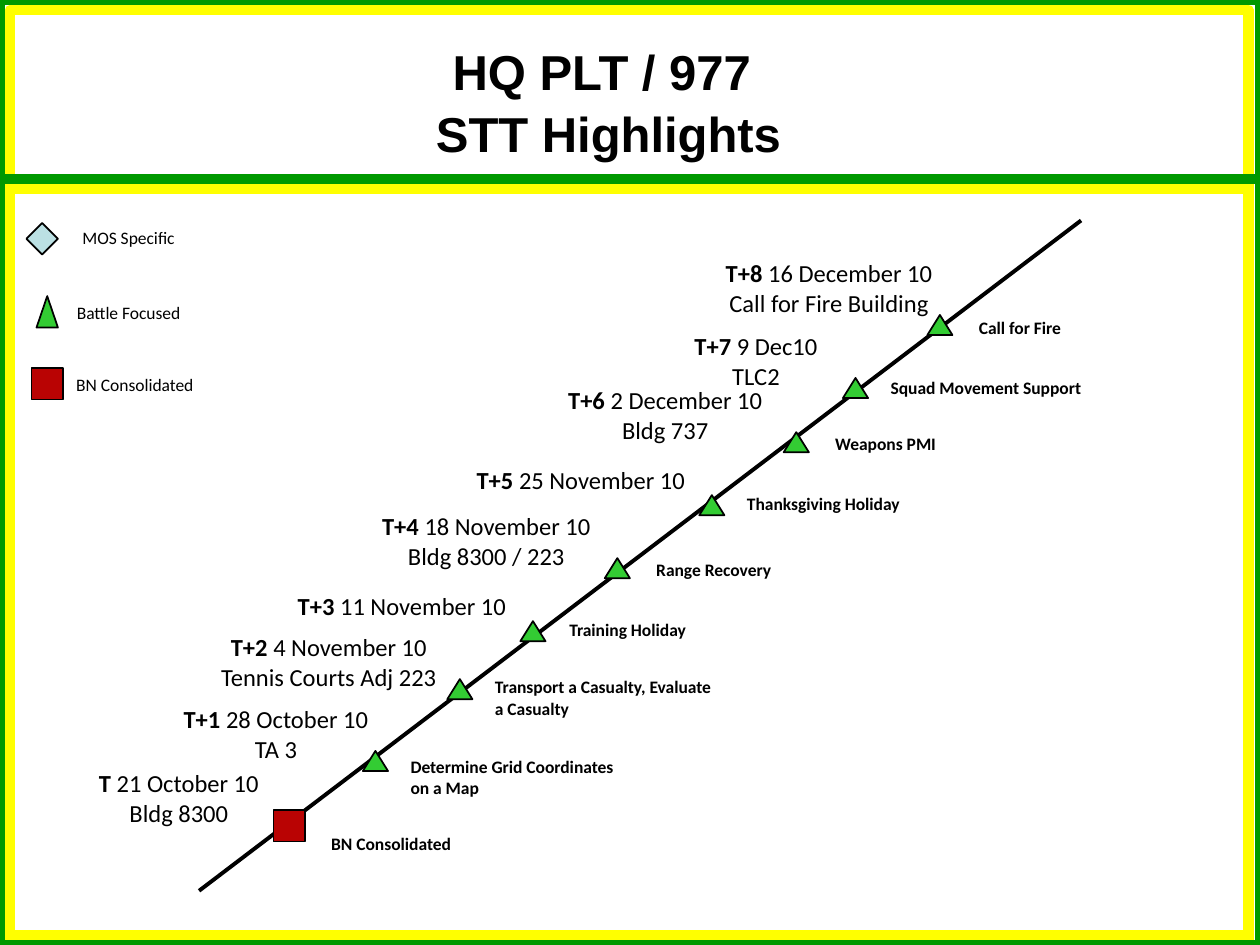
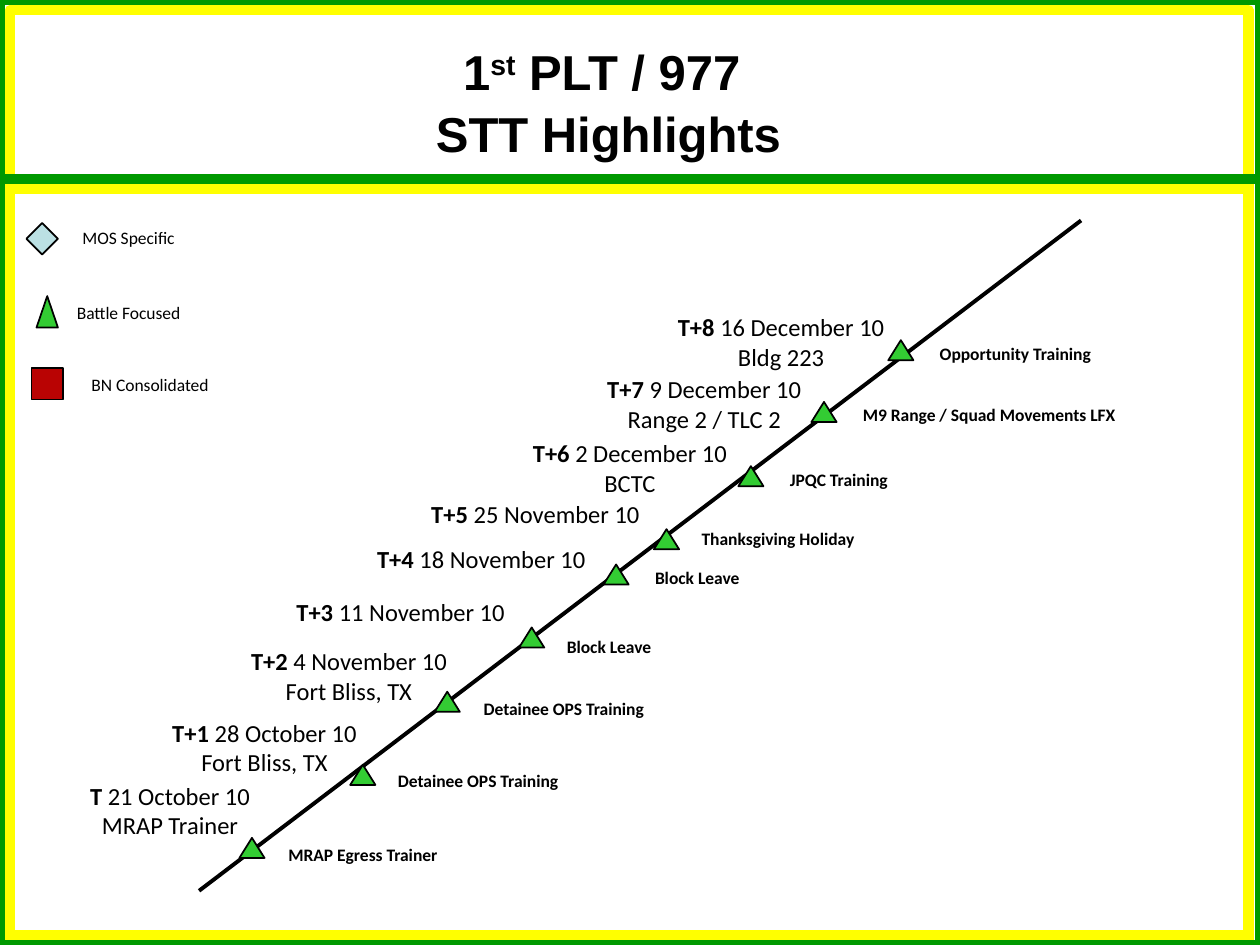
"""Build two platoon training timelines that share a frame, legend and title style."""
from dataclasses import dataclass

import pptx
import pptx.dml.color
import pptx.enum.shapes
import pptx.enum.text
import pptx.util
from lxml import etree

SHAPE = pptx.enum.shapes.MSO_SHAPE
ALIGN = pptx.enum.text.PP_ALIGN
COLUMNS, ROWS = 100, 75
BLACK, GREEN, YELLOW = "000000", "009900", "FFFF00"
LIGHT_BLUE, RED, LIGHT_GREEN = "BBE0E3", "B90303", "33CC33"
FRAME_POINTS, MARKER_POINTS, TIMELINE_POINTS = 6, 1, 2.25
LINE_ROWS = {1: 3.4, 2: 5.7}

presentation = pptx.Presentation()
presentation.slide_width = pptx.util.Inches(10)
presentation.slide_height = pptx.util.Inches(7.5)


@dataclass(frozen=True)
class Area:
    left: float
    top: float
    width: float
    height: float

    def lengths(self) -> tuple[int, int, int, int]:
        return across(self.left), down(self.top), across(self.width), down(self.height)


@dataclass(frozen=True)
class Marker:
    preset: SHAPE
    fill: str
    width: float
    height: float


@dataclass(frozen=True)
class LegendEntry:
    label: str
    marker: Marker
    marker_left: float
    marker_top: float
    label_left: float
    label_top: float
    label_width: float


@dataclass(frozen=True)
class Week:
    tag: str
    date: str
    place: str
    date_left: float
    date_top: float
    marker_left: float
    marker_top: float
    task: str
    task_left: float
    task_top: float
    task_lines: int = 1
    task_width: float = 19.2
    marker: Marker = Marker(SHAPE.ISOSCELES_TRIANGLE, LIGHT_GREEN, 2, 1.6)


@dataclass(frozen=True)
class Run:
    text: str
    bold: bool | None = None
    raised: bool = False


@dataclass(frozen=True)
class Platoon:
    name: list[Run]
    last_legend_left: float
    weeks: list[Week]


SQUARE = Marker(SHAPE.RECTANGLE, RED, 2.5, 2.5)
DIAMOND = Marker(SHAPE.DIAMOND, LIGHT_BLUE, 2.5, 2.5)
TALL_TRIANGLE = Marker(SHAPE.ISOSCELES_TRIANGLE, LIGHT_GREEN, 1.7, 2.5)

PLATOONS = [
    Platoon([Run("HQ PLT / 977 ")], 4.6, [
        Week("T", "21 October 10", "Bldg 8300", 2.5, 60.5, 21.7, 64.3,
             "BN Consolidated", 25.3, 65.6, marker=SQUARE),
        Week("T+1", "28 October 10", "TA 3", 10.2, 55.4, 28.8, 59.6,
             "Determine Grid Coordinates on a Map", 31.6, 59.5, 2),
        Week("T+2", "4 November 10", "Tennis Courts Adj 223", 14.4, 49.7, 35.5, 53.9,
             "Transport a Casualty, Evaluate a Casualty", 38.3, 53.2, 2),
        Week("T+3", "11 November 10", "", 20.2, 46.4, 41.3, 49.3,
             "Training Holiday", 44.2, 48.6),
        Week("T+4", "18 November 10", "Bldg 8300 / 223", 26.9, 40.1, 48, 44.3,
             "Range Recovery", 51.1, 43.9),
        Week("T+5", "25 November 10", "", 34.4, 36.4, 55.5, 39.3,
             "Thanksgiving Holiday", 58.3, 38.6),
        Week("T+6", "2 December 10", "Bldg 737", 41.1, 30.1, 62.2, 34.3,
             "Weapons PMI", 65.3, 33.9),
        Week("T+7", "9 Dec10", "TLC2", 48.3, 25.8, 66.9, 30,
             "Squad Movement Support", 69.7, 29.4),
        Week("T+8", "16 December 10", "Call for Fire Building", 54.1, 20, 73.6, 25,
             "Call for Fire", 76.7, 24.7),
    ]),
    Platoon([Run("1"), Run("st", raised=True), Run(" PLT / 977 ")], 5.8, [
        Week("T", "21 October 10", "MRAP Trainer", 1.8, 61.5, 19, 66.5,
             "MRAP Egress Trainer", 21.9, 66.5),
        Week("T+1", "28 October 10", "Fort Bliss, TX", 9.3, 56.5, 27.8, 60.7,
             "Detainee OPS Training", 30.6, 60.6),
        Week("T+2", "4 November 10", "Fort Bliss, TX", 16, 50.8, 34.5, 54.9,
             "Detainee OPS Training", 37.4, 54.9),
        Week("T+3", "11 November 10", "", 20.1, 46.9, 41.2, 49.8,
             "Block Leave", 44, 50),
        Week("T+4", "18 November 10", "", 26.5, 42.7, 47.9, 44.8,
             "Block Leave", 51, 44.5),
        Week("T+5", "25 November 10", "", 30.8, 39.1, 51.9, 42,
             "Thanksgiving Holiday", 54.7, 41.4),
        Week("T+6", "2 December 10", "BCTC", 38.3, 34.3, 58.6, 37,
             "JPQC Training", 61.7, 36.7),
        Week("T+7", "9 December 10", "Range 2 / TLC 2", 44.2, 29.2, 64.4, 31.9,
             "M9 Range / Squad Movements LFX", 67.5, 31.6, task_width=22.5),
        Week("T+8", "16 December 10", "Bldg 223", 50.3, 24.3, 70.5, 27,
             "Opportunity Training", 73.6, 26.7),
    ]),
]


def across(columns: float) -> int:
    return round(presentation.slide_width * columns / COLUMNS)


def down(rows: float) -> int:
    return round(presentation.slide_height * rows / ROWS)


def color(value: str) -> pptx.dml.color.RGBColor:
    return pptx.dml.color.RGBColor.from_string(value)


def add_outlined_shape(slide, preset: SHAPE, area: Area, line: str, points: float,
                       fill: str | None = None) -> None:
    shape = slide.shapes.add_shape(preset, *area.lengths())
    shape.shadow.inherit = False
    shape.line.color.rgb = color(line)
    shape.line.width = pptx.util.Pt(points)
    if fill:
        shape.fill.solid()
        shape.fill.fore_color.rgb = color(fill)
    else:
        shape.fill.background()


def add_marker(slide, marker: Marker, left: float, top: float) -> None:
    area = Area(left, top, marker.width, marker.height)
    add_outlined_shape(slide, marker.preset, area, BLACK, MARKER_POINTS, marker.fill)


def add_line(slide, start: tuple[float, float], end: tuple[float, float],
             line: str, points: float) -> None:
    connector = slide.shapes.add_connector(
        pptx.enum.shapes.MSO_CONNECTOR.STRAIGHT,
        across(start[0]), down(start[1]), across(end[0]), down(end[1]))
    connector.line.color.rgb = color(line)
    connector.line.width = pptx.util.Pt(points)
    etree.SubElement(connector._element.spPr, pptx.oxml.ns.qn("a:effectLst"))


def write_paragraphs(text_frame, lines: list[list[Run]], font_name: str, size: float,
                     alignment: ALIGN, bold: bool | None = None,
                     line_spacing: float | None = None) -> None:
    text_frame.word_wrap = True
    for index, runs in enumerate(lines):
        paragraph = text_frame.add_paragraph() if index else text_frame.paragraphs[0]
        paragraph.alignment = alignment
        paragraph.line_spacing = line_spacing
        paragraph.font.name = font_name
        paragraph.font.size = pptx.util.Pt(size)
        paragraph.font.bold = bold
        paragraph.font.color.rgb = color(BLACK)
        for item in runs:
            run = paragraph.add_run()
            run.text = item.text
            if item.bold is not None:
                run.font.bold = item.bold
            if item.raised:
                run._r.get_or_add_rPr().set("baseline", "30000")


def add_label(slide, area: Area, lines: list[list[Run]], size: float,
              alignment: ALIGN = ALIGN.CENTER, bold: bool | None = None) -> None:
    text_frame = slide.shapes.add_textbox(*area.lengths()).text_frame
    write_paragraphs(text_frame, lines, "Calibri", size, alignment, bold)


def add_frame(slide) -> None:
    add_outlined_shape(slide, SHAPE.RECTANGLE, Area(0.8, 0.8, 98.3, 74.2),
                       YELLOW, FRAME_POINTS)
    add_outlined_shape(slide, SHAPE.RECTANGLE, Area(0, 0, COLUMNS, ROWS),
                       GREEN, FRAME_POINTS)
    for row, margin, line in ((74.2, 0.8, YELLOW), (15, 0.8, YELLOW), (14.2, 0, GREEN)):
        add_line(slide, (margin, row), (COLUMNS - margin, row), line, FRAME_POINTS)


def add_title(slide, name: list[Run]) -> None:
    title = slide.shapes.title
    title.left, title.top, title.width, title.height = Area(3.3, 0.2, 90, 15.5).lengths()
    title.text_frame.auto_size = pptx.enum.text.MSO_AUTO_SIZE.NONE
    title.text_frame.vertical_anchor = pptx.enum.text.MSO_ANCHOR.MIDDLE
    write_paragraphs(title.text_frame, [name, [Run("STT Highlights")]], "Arial", 28,
                     ALIGN.CENTER, bold=True, line_spacing=1.05)


def add_legend(slide, last_left: float) -> None:
    entries = [
        LegendEntry("MOS Specific", DIAMOND, 2.1, 17.7, 5, 17.5, 10.4),
        LegendEntry("Battle Focused", TALL_TRIANGLE, 2.9, 23.5, 4.6, 23.5, 11.2),
        LegendEntry("BN Consolidated", SQUARE, 2.5, 29.2, last_left, 29.2, 12.2),
    ]
    for entry in entries:
        add_marker(slide, entry.marker, entry.marker_left, entry.marker_top)
        area = Area(entry.label_left, entry.label_top, entry.label_width, 2.7)
        add_label(slide, area, [[Run(entry.label)]], 10)


def add_week(slide, week: Week) -> None:
    lines = [[Run(week.tag + " ", bold=True), Run(week.date)]]
    if week.place:
        lines.append([Run(week.place)])
    date_area = Area(week.date_left, week.date_top, 23.4, LINE_ROWS[len(lines)])
    add_label(slide, date_area, lines, 14)
    task_area = Area(week.task_left, week.task_top, week.task_width,
                     1 + 1.7 * week.task_lines)
    add_label(slide, task_area, [[Run(week.task)]], 10, ALIGN.LEFT, bold=True)
    add_marker(slide, week.marker, week.marker_left, week.marker_top)


def add_platoon_slide(platoon: Platoon) -> None:
    slide = presentation.slides.add_slide(presentation.slide_layouts.get_by_name("Title Only"))
    add_frame(slide)
    add_line(slide, (15.8, 70.7), (85.8, 17.5), BLACK, TIMELINE_POINTS)
    add_title(slide, platoon.name)
    add_legend(slide, platoon.last_legend_left)
    for week in platoon.weeks:
        add_week(slide, week)


def main() -> None:
    for platoon in PLATOONS:
        add_platoon_slide(platoon)
    presentation.save("out.pptx")


if __name__ == "__main__":
    main()
